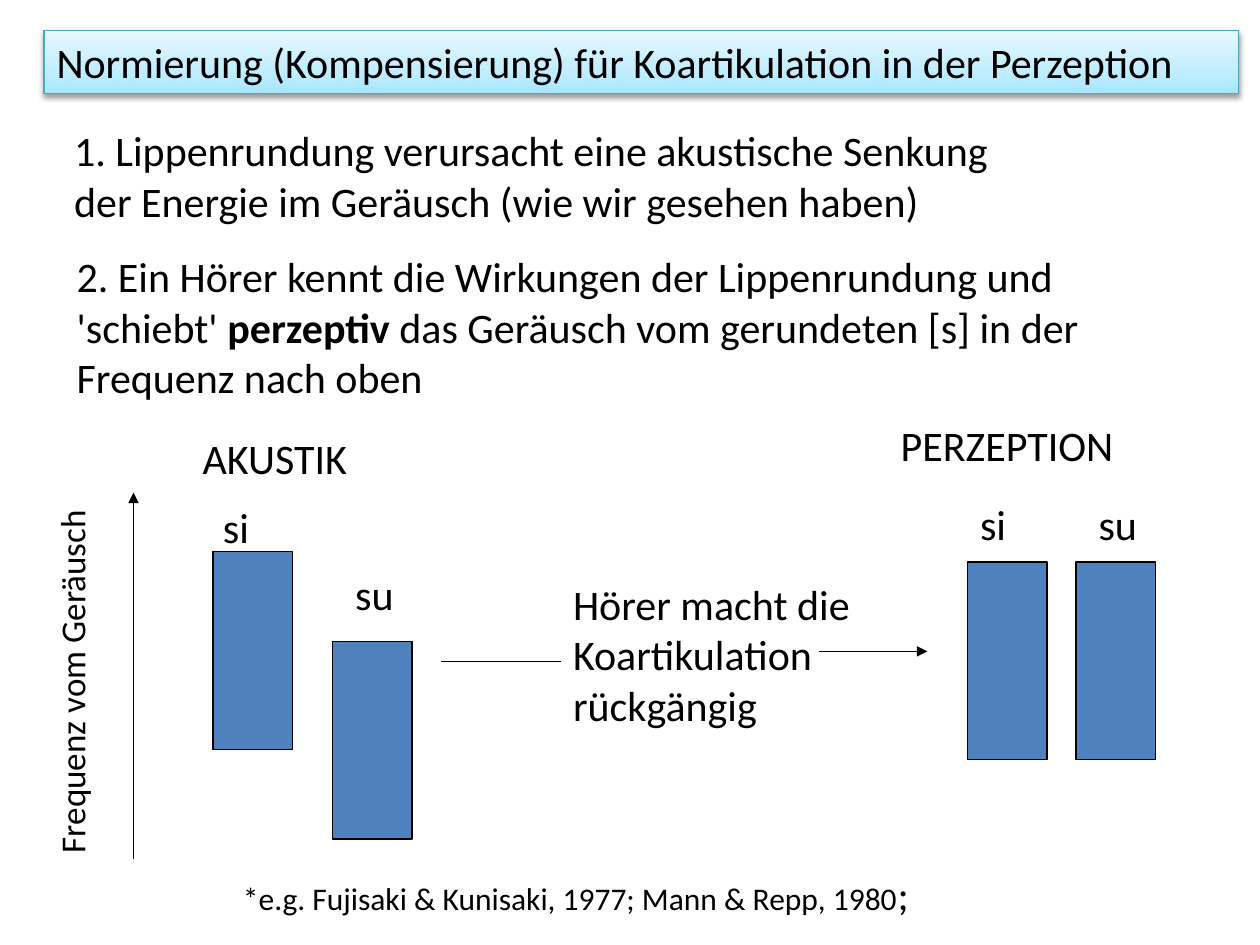
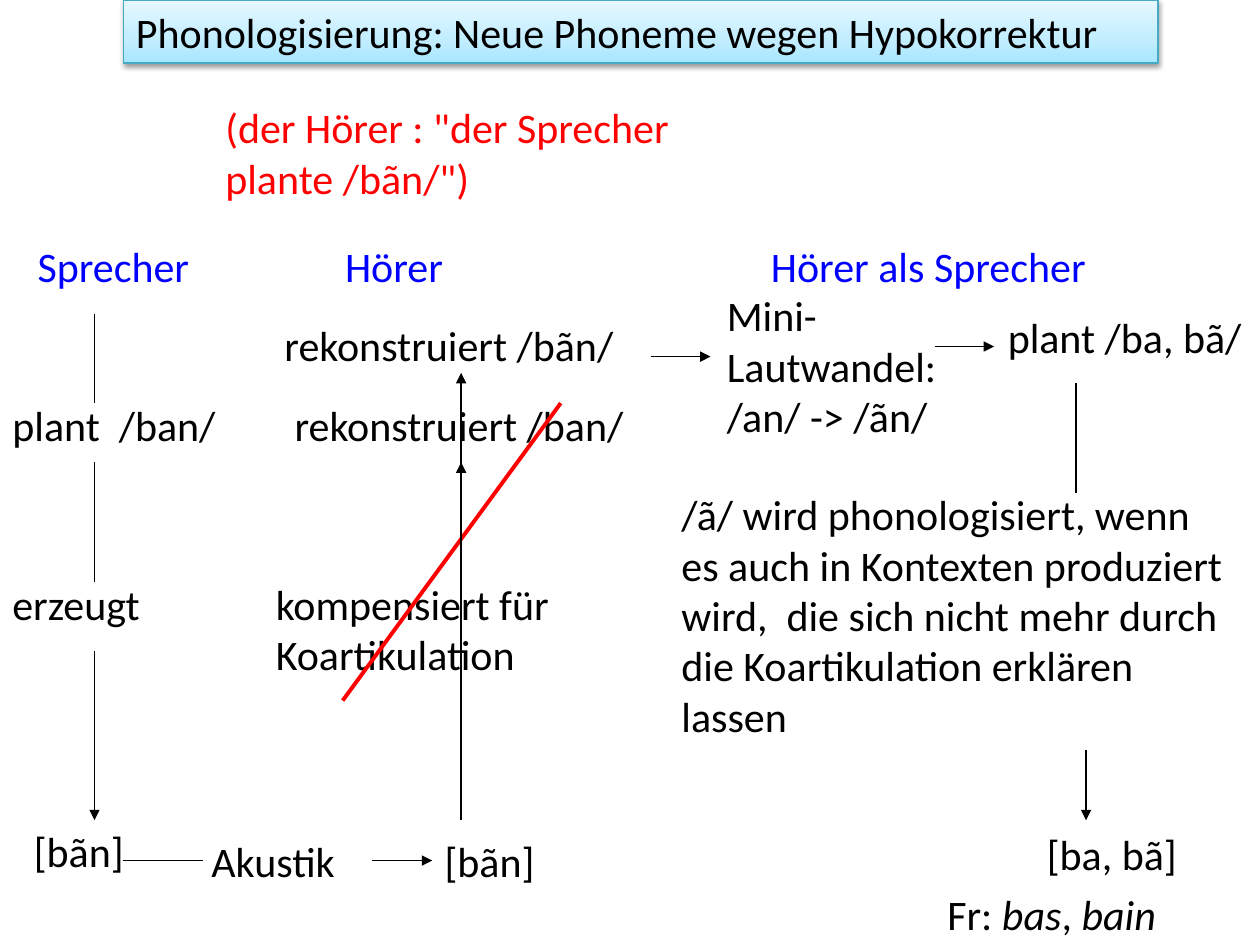
"""Build two slides on coarticulation, perception and phonologisation."""
from dataclasses import dataclass
from typing import NamedTuple

import lxml.etree
import pptx
import pptx.dml.color
import pptx.enum.shapes
import pptx.enum.text
import pptx.oxml
import pptx.oxml.ns
import pptx.shapes.autoshape
import pptx.shapes.connector
import pptx.slide
import pptx.util

EMU_PER_PX = 9144
FONT = "Calibri"
BODY_SIZE = 24
LINE_HEIGHT = 50
BLACK = pptx.dml.color.RGBColor(0x00, 0x00, 0x00)
RED = pptx.dml.color.RGBColor(0xFF, 0x00, 0x00)
HEADING_BLUE = pptx.dml.color.RGBColor(0x00, 0x00, 0xFF)
BAR_BLUE = pptx.dml.color.RGBColor(0x4F, 0x81, 0xBD)
BANNER_EDGE = pptx.dml.color.RGBColor(0x46, 0xAA, 0xC5)
BANNER_STOPS = (
    (0, pptx.dml.color.RGBColor(0xA7, 0xE6, 0xFF)),
    (35, pptx.dml.color.RGBColor(0xC1, 0xED, 0xFF)),
    (100, pptx.dml.color.RGBColor(0xE7, 0xF8, 0xFF)),
)
BAR_WIDTH, BAR_HEIGHT = 63, 157


class Run(NamedTuple):
    """A stretch of text in one style."""

    text: str
    size: int = BODY_SIZE
    bold: bool = False
    italic: bool = False


@dataclass(frozen=True)
class Label:
    """A text box; a plain string stands for a single run."""

    left: int
    top: int
    width: int
    text: str | tuple[Run, ...]
    height: int = LINE_HEIGHT
    color: pptx.dml.color.RGBColor = BLACK
    wrap: bool = False
    rotation: int = 0


@dataclass(frozen=True)
class Line:
    """A straight line, with an arrowhead at its end if wanted."""

    start: tuple[int, int]
    end: tuple[int, int]
    arrow: bool = False
    color: pptx.dml.color.RGBColor = BLACK
    weight: float = 0.75


def px(length: int) -> pptx.util.Emu:
    """Turn px into EMU."""
    return pptx.util.Emu(length * EMU_PER_PX)


def write_text(
    shape: pptx.shapes.autoshape.Shape,
    text: str | tuple[Run, ...],
    color: pptx.dml.color.RGBColor,
    wrap: bool,
) -> None:
    """Fill the shape with one left-aligned paragraph."""
    frame = shape.text_frame
    frame.word_wrap = wrap
    frame.auto_size = pptx.enum.text.MSO_AUTO_SIZE.SHAPE_TO_FIT_TEXT
    frame.vertical_anchor = pptx.enum.text.MSO_ANCHOR.TOP
    paragraph = frame.paragraphs[0]
    paragraph.alignment = pptx.enum.text.PP_ALIGN.LEFT
    for part in (Run(text),) if isinstance(text, str) else text:
        run = paragraph.add_run()
        run.text = part.text
        run.font.name = FONT
        run.font.size = pptx.util.Pt(part.size)
        run.font.bold = part.bold
        run.font.italic = part.italic
        run.font.color.rgb = color


def add_label(slide: pptx.slide.Slide, label: Label) -> pptx.shapes.autoshape.Shape:
    """Draw a text box."""
    shape = slide.shapes.add_textbox(
        px(label.left), px(label.top), px(label.width), px(label.height)
    )
    shape.rotation = label.rotation
    write_text(shape, label.text, label.color, label.wrap)
    return shape


def add_line(slide: pptx.slide.Slide, line: Line) -> pptx.shapes.connector.Connector:
    """Draw a line without shadow."""
    connector = slide.shapes.add_connector(
        pptx.enum.shapes.MSO_CONNECTOR.STRAIGHT,
        *(px(value) for value in line.start + line.end),
    )
    connector.line.color.rgb = line.color
    connector.line.width = pptx.util.Pt(line.weight)
    if line.arrow:
        outline = connector.line._get_or_add_ln()
        lxml.etree.SubElement(outline, pptx.oxml.ns.qn("a:tailEnd"), type="triangle")
    properties = connector._element.spPr
    lxml.etree.SubElement(properties, pptx.oxml.ns.qn("a:effectLst"))
    return connector


def add_rectangle(
    slide: pptx.slide.Slide, left: int, top: int, width: int, height: int,
    edge: pptx.dml.color.RGBColor,
) -> pptx.shapes.autoshape.Shape:
    """Draw a thinly outlined rectangle without shadow."""
    shape = slide.shapes.add_shape(
        pptx.enum.shapes.MSO_SHAPE.RECTANGLE, px(left), px(top), px(width), px(height)
    )
    shape.shadow.inherit = False
    shape.line.color.rgb = edge
    shape.line.width = pptx.util.Pt(0.75)
    return shape


def add_bar(slide: pptx.slide.Slide, left: int, top: int) -> None:
    """Draw the frequency bar of one syllable."""
    bar = add_rectangle(slide, left, top, BAR_WIDTH, BAR_HEIGHT, BLACK)
    bar.fill.solid()
    bar.fill.fore_color.rgb = BAR_BLUE


def add_banner(slide: pptx.slide.Slide, left: int, top: int, width: int, title: str) -> None:
    """Draw the title band with its gradient and soft shadow."""
    banner = add_rectangle(slide, left, top, width, LINE_HEIGHT, BANNER_EDGE)
    namespace = pptx.oxml.ns.nsdecls("a")
    stops = "".join(
        f'<a:gs pos="{position * 1000}"><a:srgbClr val="{color}"/></a:gs>'
        for position, color in BANNER_STOPS
    )
    gradient = pptx.oxml.parse_xml(
        f'<a:gradFill {namespace} rotWithShape="1"><a:gsLst>{stops}</a:gsLst>'
        '<a:lin ang="16200000" scaled="0"/></a:gradFill>'
    )
    shadow = pptx.oxml.parse_xml(
        f'<a:outerShdw {namespace} blurRad="40000" dist="20000" dir="5400000" '
        f'rotWithShape="0"><a:srgbClr val="{BLACK}"><a:alpha val="38000"/>'
        "</a:srgbClr></a:outerShdw>"
    )
    properties = banner._element.spPr
    properties.find(pptx.oxml.ns.qn("a:prstGeom")).addnext(gradient)
    properties.find(pptx.oxml.ns.qn("a:effectLst")).append(shadow)
    write_text(banner, title, BLACK, True)


def build_perception(slide: pptx.slide.Slide) -> None:
    """Show how listeners undo coarticulation."""
    add_banner(slide, 35, 24, 948,
               "Normierung (Kompensierung) für Koartikulation in der Perzeption")
    for left, top in ((169, 438), (264, 509), (768, 446), (854, 446)):
        add_bar(slide, left, top)
    labels = (
        Label(49, 94, 766, "1. Lippenrundung verursacht eine akustische Senkung "
              "der Energie im Geräusch (wie wir gesehen haben)", 91, wrap=True),
        Label(51, 194, 819, (
            Run("2. Ein Hörer kennt die Wirkungen der Lippenrundung und 'schiebt' "),
            Run("perzeptiv", bold=True),
            Run(" das Geräusch vom gerundeten [s] in der Frequenz nach oben"),
        ), 131, wrap=True),
        Label(151, 338, 137, "AKUSTIK"),
        Label(705, 328, 191, "PERZEPTION"),
        Label(167, 393, 41, "si"),
        Label(272, 446, 51, "su"),
        Label(768, 391, 41, "si"),
        Label(862, 391, 51, "su"),
        Label(-91, 517, 296, (Run("Frequenz vom Geräusch", 20),), 44, rotation=270),
        Label(445, 454, 247, "Hörer macht die Koartikulation rückgängig", 131, wrap=True),
        Label(183, 684, 554, (
            Run("*e.g. Fujisaki & Kunisaki, 1977; Mann & Repp, 1980", 18), Run(";"),
        )),
    )
    for label in labels:
        add_label(slide, label)
    for line in (
        Line((106, 682), (106, 391), arrow=True),
        Line((350, 525), (445, 525)),
        Line((650, 517), (736, 517), arrow=True),
    ):
        add_line(slide, line)


def build_phonologisation(slide: pptx.slide.Slide) -> None:
    """Follow a nasal vowel from speaker to listener to new phoneme."""
    speaker_x, listener_x, acoustics_y = 75, 366, 683
    add_banner(slide, 98, 0, 821, "Phonologisierung: Neue Phoneme wegen Hypokorrektur")
    for left, width, heading in (
        (20, 142, "Sprecher"), (264, 99, "Hörer"), (602, 331, "Hörer als Sprecher"),
    ):
        add_label(slide, Label(left, 186, width, heading, color=HEADING_BLUE))
    labels = (
        Label(169, 76, 425, '(der Hörer : "der Sprecher plante /bãn/")', 91, RED, True),
        Label(0, 312, 192, "plant  /ban/", wrap=True),
        Label(0, 454, 124, "erzeugt"),
        Label(17, 650, 92, "[bãn]"),
        Label(158, 658, 173, "Akustik", wrap=True),
        Label(209, 454, 268, "kompensiert für Koartikulation", 91, wrap=True),
        Label(224, 312, 297, "rekonstruiert /ban/"),
        Label(216, 249, 297, "rekonstruiert /bãn/"),
        Label(531, 383, 453, "/ã/ wird phonologisiert, wenn es auch in Kontexten produziert "
              "wird,  die sich nicht mehr durch die Koartikulation erklären lassen",
              212, wrap=True),
        Label(567, 225, 200, "Mini-Lautwandel: /an/ -> /ãn/", 131, wrap=True),
        Label(790, 242, 210, "plant /ba, bã/"),
        Label(821, 653, 124, "[ba, bã]"),
        Label(742, 700, 208, (
            Run("Fr: "), Run("bas", italic=True), Run(", "), Run("bain", italic=True),
        ), wrap=True),
    )
    for label in labels:
        add_label(slide, label)
    for line in (
        Line((speaker_x, 249), (speaker_x, 320)),
        Line((speaker_x, 367), (speaker_x, 462)),
        Line((speaker_x, 517), (speaker_x, 651), arrow=True),
        Line((98, acoustics_y), (161, acoustics_y)),
        Line((listener_x, 462), (listener_x, 367), arrow=True),
        Line((listener_x, 651), (listener_x, 548)),
        Line((272, 556), (445, 320), color=RED, weight=2.25),
        Line((listener_x, 651), (listener_x, 296), arrow=True),
        Line((517, 283), (564, 283), arrow=True),
        Line((742, 275), (789, 275), arrow=True),
        Line((854, 304), (854, 391)),
        Line((862, 595), (862, 651), arrow=True),
    ):
        add_line(slide, line)
    heard_form = add_label(slide, Label(343, 658, 92, "[bãn]"))
    heard_arrow = add_line(slide, Line((295, acoustics_y), (343, acoustics_y), arrow=True))
    heard_arrow.end_connect(heard_form, 1)


def main() -> None:
    """Build and save the presentation."""
    presentation = pptx.Presentation()
    presentation.slide_width, presentation.slide_height = px(1000), px(750)
    for build in (build_perception, build_phonologisation):
        build(presentation.slides.add_slide(presentation.slide_layouts[6]))
    presentation.save("out.pptx")


if __name__ == "__main__":
    main()
